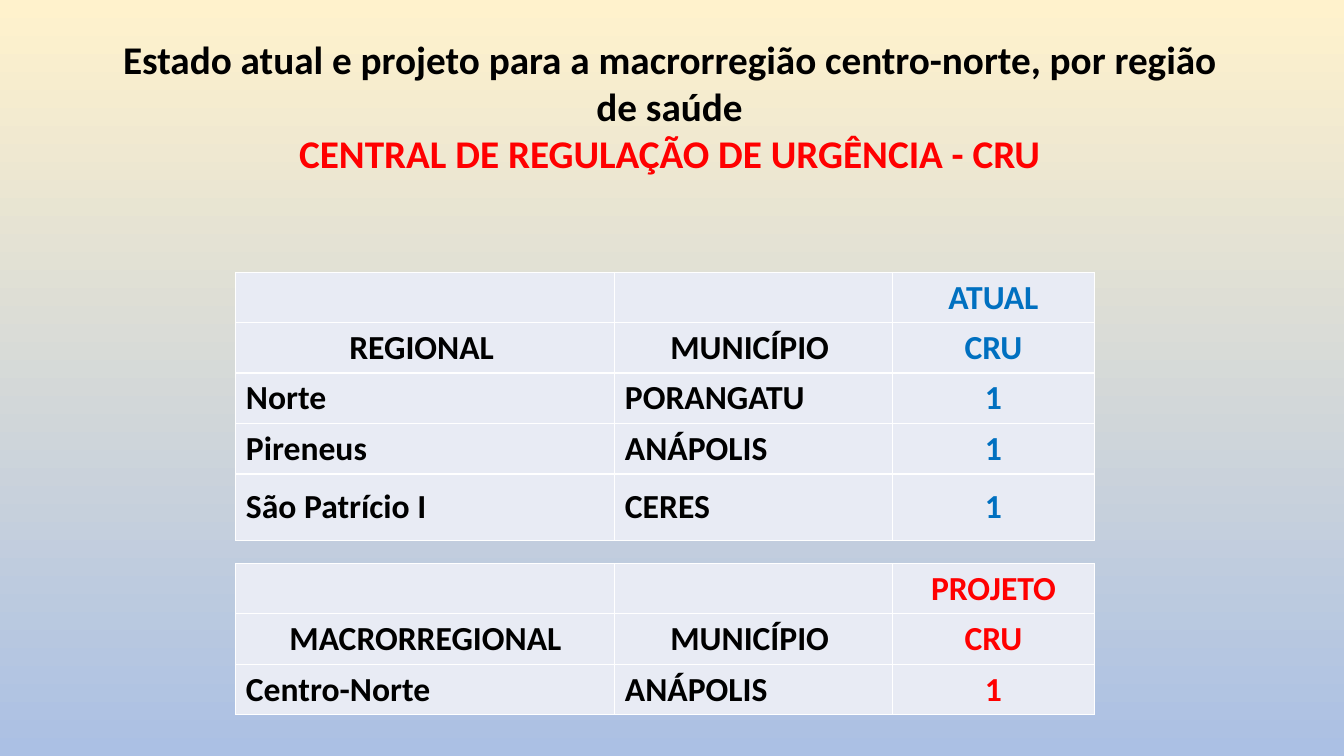
from dataclasses import dataclass

from lxml import etree
from pptx import Presentation, util as u
from pptx.dml.color import RGBColor
from pptx.enum import text
from pptx.oxml import ns

WIDTH, HEIGHT = u.Inches(13.33), u.Inches(7.5)
FONT = "Calibri"
BLACK = RGBColor(0x00, 0x00, 0x00)
RED = RGBColor(0xFF, 0x00, 0x00)
BLUE = RGBColor(0x00, 0x70, 0xC0)
CREAM = RGBColor(0xFF, 0xF2, 0xCC)
SKY = RGBColor(0xAB, 0xC0, 0xE4)
CELL_FILL = RGBColor(0xE8, 0xEB, 0xF4)
BORDER = RGBColor(0xFF, 0xFF, 0xFF)

# Grid lengths are hundredths of the slide's width and height.
TABLE_LEFT = 17.55
COLUMN_WIDTHS = (28.2, 20.63, 15.08)
ROW_HEIGHT = 6.67
HEADER_ROWS = 2


@dataclass(frozen=True)
class RegulationTable:
    top: float
    accent: RGBColor
    rows: tuple[tuple[str, str, str], ...]
    last_row_height: float = ROW_HEIGHT


TABLES = (
    RegulationTable(36, BLUE, (
        ("", "", "ATUAL"),
        ("REGIONAL ", "MUNICÍPIO ", "CRU"),
        ("Norte", "PORANGATU", "1"),
        ("Pireneus", "ANÁPOLIS", "1"),
        ("São Patrício I", "CERES", "1"),
    ), 8.8),
    RegulationTable(74.53, RED, (
        ("", "", "PROJETO"),
        ("MACRORREGIONAL", "MUNICÍPIO ", "CRU"),
        ("Centro-Norte", "ANÁPOLIS", "1"),
    )),
)


def across(share: float) -> int:
    return round(WIDTH * share / 100)


def down(share: float) -> int:
    return round(HEIGHT * share / 100)


def set_font(font, size: float, color: RGBColor) -> None:
    font.name, font.size, font.bold = FONT, u.Pt(size), True
    font.color.rgb = color


def add_borders(cell) -> None:
    """Put a thin line on all four sides, ahead of the cell's fill."""
    properties = cell._tc.get_or_add_tcPr()
    for index, side in enumerate(("lnL", "lnR", "lnT", "lnB")):
        line = etree.Element(ns.qn(f"a:{side}"), w=str(u.Pt(0.96)))
        fill = etree.SubElement(line, ns.qn("a:solidFill"))
        etree.SubElement(fill, ns.qn("a:srgbClr"), val=str(BORDER))
        properties.insert(index, line)


def add_background(slide) -> None:
    fill = slide.background.fill
    fill.gradient()
    fill.gradient_angle = 270
    for stop, color in zip(fill.gradient_stops, (CREAM, SKY)):
        stop.color.rgb = color


def add_title(slide) -> None:
    sp = slide.shapes.add_textbox(across(7.88), down(4), across(83.87), down(20))
    tf = sp.text_frame
    tf.word_wrap = True
    p = tf.paragraphs[0]
    p.alignment = text.PP_ALIGN.CENTER
    set_font(p.font, 28, BLACK)
    r = p.add_run()
    r.text = "Estado atual e projeto para a macrorregião centro-norte, por região de saúde"
    set_font(r.font, 28, BLACK)
    p.add_line_break()
    r = p.add_run()
    r.text = "CENTRAL DE REGULAÇÃO DE URGÊNCIA - CRU"
    set_font(r.font, 28, RED)


def add_regulation_table(slide, data: RegulationTable) -> None:
    heights = [ROW_HEIGHT] * (len(data.rows) - 1) + [data.last_row_height]
    table = slide.shapes.add_table(
        len(data.rows), len(COLUMN_WIDTHS), across(TABLE_LEFT), down(data.top),
        across(sum(COLUMN_WIDTHS)), down(sum(heights))).table
    table.first_row = table.horz_banding = False
    for column, width in zip(table.columns, COLUMN_WIDTHS):
        column.width = across(width)
    for i, (row, height) in enumerate(zip(table.rows, heights)):
        row.height = down(height)
        for j, cell in enumerate(row.cells):
            is_header, is_count = i < HEADER_ROWS, j == len(COLUMN_WIDTHS) - 1
            cell.fill.solid()
            cell.fill.fore_color.rgb = CELL_FILL
            add_borders(cell)
            cell.vertical_anchor = (text.MSO_ANCHOR.BOTTOM if is_header and is_count
                                    else text.MSO_ANCHOR.MIDDLE)
            p = cell.text_frame.paragraphs[0]
            p.text = data.rows[i][j]
            p.alignment = (text.PP_ALIGN.CENTER if is_header or is_count
                           else text.PP_ALIGN.LEFT)
            set_font(p.font, 24, data.accent if is_count else BLACK)


def main() -> None:
    prs = Presentation()
    prs.slide_width, prs.slide_height = WIDTH, HEIGHT
    slide = prs.slides.add_slide(prs.slide_layouts[6])
    add_background(slide)
    add_title(slide)
    for data in TABLES:
        add_regulation_table(slide, data)
    prs.save("out.pptx")


if __name__ == "__main__":
    main()
